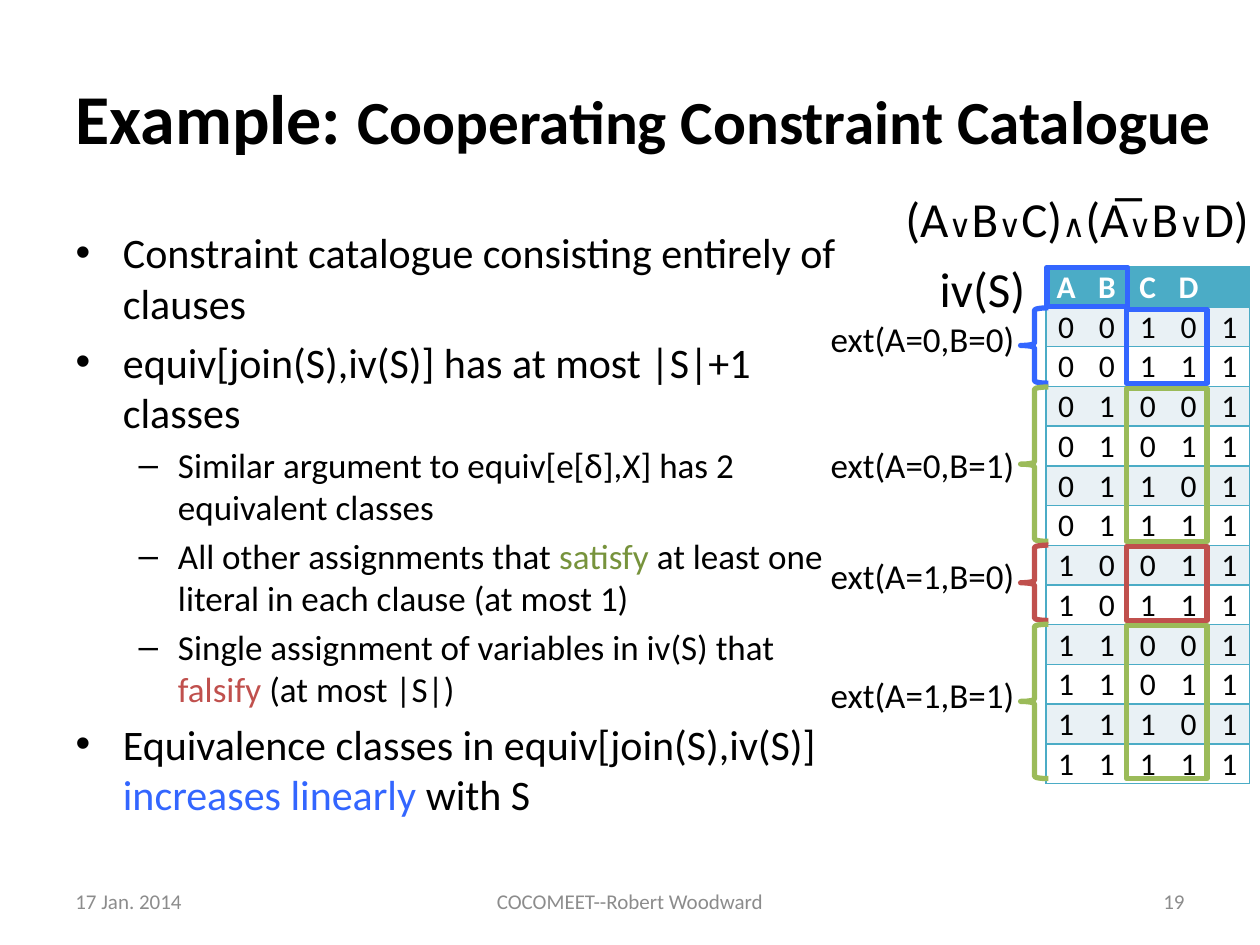
from dataclasses import dataclass
from itertools import product
from typing import Optional

from lxml.etree import SubElement
from pptx import Presentation
from pptx.dml.color import RGBColor as Rgb
from pptx.enum.shapes import MSO_SHAPE as Kind
from pptx.enum.text import MSO_ANCHOR as Anchor, MSO_AUTO_SIZE as Fit, PP_ALIGN as Align
from pptx.oxml.ns import qn
from pptx.util import Inches, Pt


@dataclass(frozen=True)
class Theme:
    font: str = "Calibri"
    black: str = "000000"
    white: str = "FFFFFF"
    gray: str = "8C8C8C"
    teal: str = "4BACC6"
    band: str = "E9F1F5"
    blue: str = "3366FF"
    green: str = "9BBB59"
    olive: str = "77933C"
    red: str = "C0504D"
    title: int = 40
    topic: int = 35
    math: int = 28
    body: int = 24
    sub: int = 20
    cell: int = 18
    foot: int = 12
    rule: int = 1
    frame: int = 3


T = Theme()


@dataclass(frozen=True)
class Box:
    left: float
    top: float
    width: float
    height: float

    def place(self):
        return [Inches(n) for n in (self.left, self.top, self.width, self.height)]


@dataclass(frozen=True)
class Span:
    """A stretch of text, with a size or colour of its own if need be."""
    text: str
    size: Optional[int] = None
    color: Optional[str] = None


@dataclass(frozen=True)
class Item:
    spans: list
    level: int = 0


@dataclass(frozen=True)
class Label:
    box: Box
    spans: list
    size: int
    align: Align = Align.LEFT
    color: str = T.black
    anchor: Anchor = Anchor.TOP


@dataclass(frozen=True)
class Group:
    """Table rows that share one assignment of A and B."""
    name: str
    first: int
    count: int
    color: str
    top: float


GRID = Box(8.3, 2.12, 1.62, 4.08)
HEADS = ["A", "B", "C", "D", ""]
ROWS = [
    (a, b, c, d, 1)
    for a, b, c, d in product((0, 1), repeat=4)
    if (a or b or c) and (not a or b or d)
]
STEP = GRID.height / (len(ROWS) + 1)

GROUPS = [
    Group("ext(A=0,B=0)", 1, 2, T.blue, 2.47),
    Group("ext(A=0,B=1)", 3, 4, T.green, 3.47),
    Group("ext(A=1,B=0)", 7, 2, T.red, 4.35),
    Group("ext(A=1,B=1)", 9, 4, T.green, 5.3),
]

ITEMS = [
    Item([Span("Constraint catalogue consisting entirely of clauses")]),
    Item([Span("equiv[join(S),iv(S)] has at most |S|+1 classes")]),
    Item([Span("Similar argument to equiv[e[δ],X] has 2 equivalent classes")], 1),
    Item([Span("All other assignments that "), Span("satisfy ", color=T.olive),
          Span("at least one literal in each clause (at most 1)")], 1),
    Item([Span("Single assignment of variables in iv(S) that "),
          Span("falsify ", color=T.red), Span("(at most |S|)")], 1),
    Item([Span("Equivalence classes in equiv[join(S),iv(S)] "),
          Span("increases linearly ", color=T.blue), Span("with S")]),
]

FORMULA = [
    Span("(A"), Span("∨", T.cell), Span("B"), Span("∨", T.cell), Span("C)"),
    Span("∧", T.cell), Span("(A̅"), Span("∨", T.cell), Span("B"),
    Span("∨", T.sub), Span("D)"),
]

LABELS = [
    Label(Box(7.36, 2, 1.13, 0.57), [Span("iv(S)")], T.math),
    Label(Box(6.27, 1.45, 3.74, 0.57), FORMULA, T.math, Align.RIGHT),
    Label(Box(0.5, 6.95, 2.33, 0.4), [Span("17 Jan. 2014")],
          T.foot, Align.LEFT, T.gray, Anchor.MIDDLE),
    Label(Box(3.01, 6.95, 3.98, 0.4), [Span("COCOMEET--Robert Woodward")],
          T.foot, Align.CENTER, T.gray, Anchor.MIDDLE),
    Label(Box(7.17, 6.95, 2.33, 0.4), [Span("19")],
          T.foot, Align.RIGHT, T.gray, Anchor.MIDDLE),
]


def write(para, spans: list, size: int, color: str = T.black,
          align: Align = Align.LEFT, bold: bool = False) -> None:
    para.alignment = align
    font = para.font
    font.name, font.size, font.bold = T.font, Pt(size), bold
    font.color.rgb = Rgb.from_string(color)
    for span in spans:
        run = para.add_run()
        run.text = span.text
        if span.size:
            run.font.size = Pt(span.size)
        if span.color:
            run.font.color.rgb = Rgb.from_string(span.color)


def move(shape, box: Box) -> None:
    shape.left, shape.top, shape.width, shape.height = box.place()


def add_label(slide, label: Label) -> None:
    frame = slide.shapes.add_textbox(*label.box.place()).text_frame
    frame.word_wrap = True
    frame.vertical_anchor = label.anchor
    write(frame.paragraphs[0], label.spans, label.size, label.color, label.align)


def add_frame(slide, kind: Kind, box: Box, color: str) -> None:
    shape = slide.shapes.add_shape(kind, *box.place())
    shape.shadow.inherit = False
    shape.fill.background()
    shape.line.color.rgb = Rgb.from_string(color)
    shape.line.width = Pt(T.frame)


def add_group(slide, group: Group) -> None:
    top = GRID.top + group.first * STEP
    tall = group.count * STEP
    add_frame(slide, Kind.LEFT_BRACE, Box(8.1, top + 0.01, 0.22, tall - 0.03), group.color)
    add_frame(slide, Kind.RECTANGLE, Box(8.94, top + 0.02, 0.64, tall - 0.04), group.color)
    add_label(slide, Label(Box(6.27, group.top, 1.88, 0.44),
                           [Span(group.name)], T.sub, Align.RIGHT))


def edge(cell, sides: str) -> None:
    """Rule the named sides (of L, R, T, B) and clear the others."""
    props = cell._tc.get_or_add_tcPr()
    for spot, side in enumerate("LRTB"):
        line = SubElement(props, qn(f"a:ln{side}"), w=str(Pt(T.rule)))
        props.insert(spot, line)
        if side in sides:
            fill = SubElement(line, qn("a:solidFill"))
            SubElement(fill, qn("a:srgbClr"), val=T.teal)
        else:
            SubElement(line, qn("a:noFill"))


def add_grid(slide) -> None:
    data = [HEADS, *ROWS]
    table = slide.shapes.add_table(len(data), len(HEADS), *GRID.place()).table
    for col in table.columns:
        col.width = Inches(GRID.width / len(HEADS))
    for r, row in enumerate(data):
        table.rows[r].height = Inches(STEP)
        fill = T.teal if r == 0 else T.band if r % 2 else T.white
        for c, value in enumerate(row):
            cell = table.cell(r, c)
            cell.margin_left = cell.margin_right = cell.margin_top = Inches(0.01)
            cell.margin_bottom = 0
            cell.vertical_anchor = Anchor.BOTTOM
            cell.fill.solid()
            cell.fill.fore_color.rgb = Rgb.from_string(fill)
            write(cell.text_frame.paragraphs[0], [Span(str(value))], T.cell,
                  T.black if r else T.white, Align.CENTER, r == 0)
            edge(cell, "TB" + {0: "L", len(HEADS) - 1: "R"}.get(c, ""))


def add_body(shape) -> None:
    move(shape, Box(0.5, 1.75, 6.24, 4.95))
    frame = shape.text_frame
    frame.auto_size = Fit.NONE
    for n, item in enumerate(ITEMS):
        para = frame.add_paragraph() if n else frame.paragraphs[0]
        para.level = item.level
        write(para, item.spans, T.sub if item.level else T.body)


def main() -> None:
    deck = Presentation()
    deck.slide_width, deck.slide_height = Inches(10), Inches(7.5)
    slide = deck.slides.add_slide(deck.slide_layouts[1])
    title, body = slide.placeholders
    move(title, Box(0.5, 0.3, 9.51, 1.25))
    title.text_frame.auto_size = Fit.NONE
    write(title.text_frame.paragraphs[0],
          [Span("Example: "), Span("Cooperating Constraint Catalogue", T.topic)],
          T.title, bold=True)
    add_body(body)
    add_grid(slide)
    for label in LABELS:
        add_label(slide, label)
    for group in GROUPS:
        add_group(slide, group)
    add_frame(slide, Kind.RECTANGLE, Box(8.31, GRID.top, 0.64, STEP), T.blue)
    deck.save("out.pptx")


if __name__ == "__main__":
    main()
